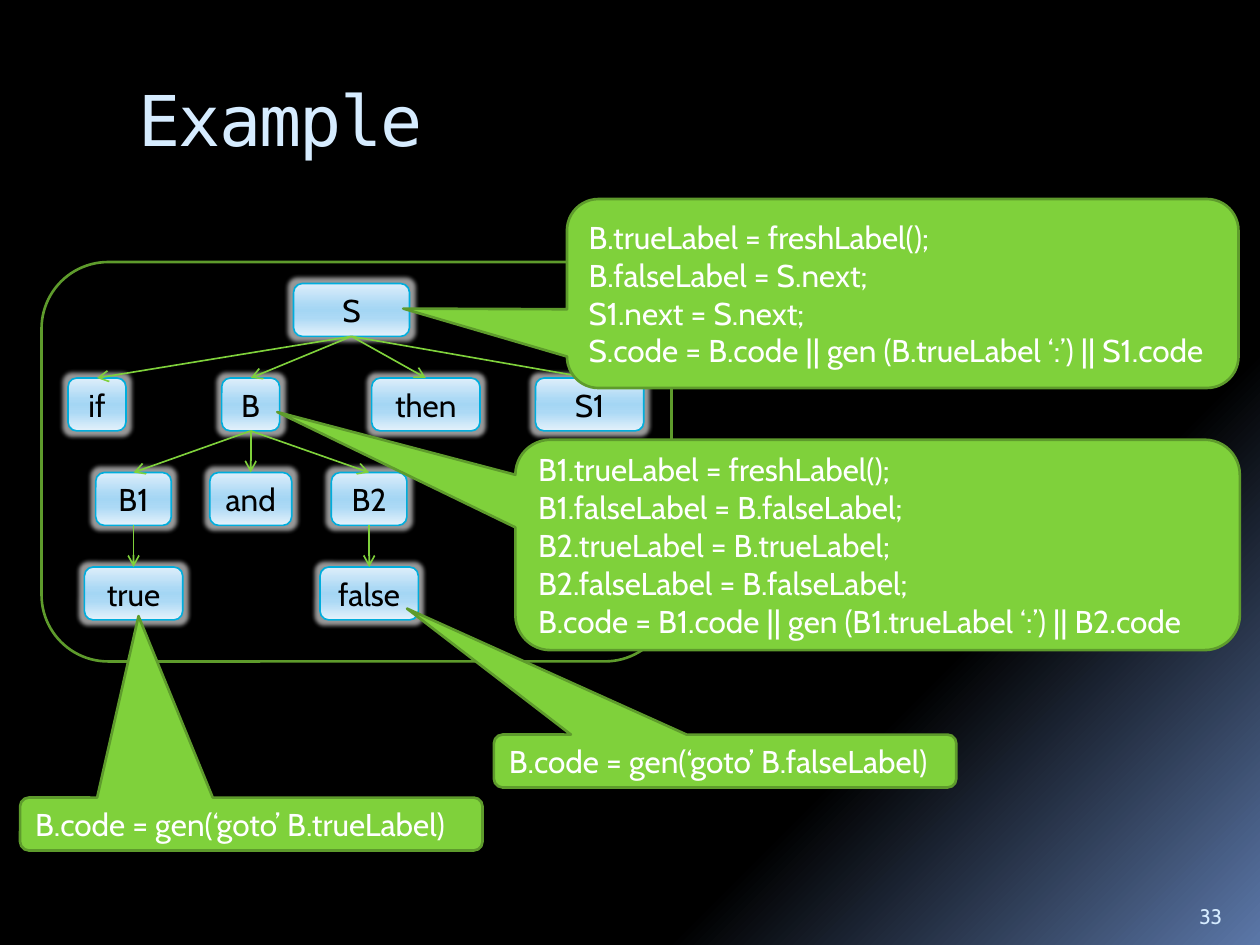
from lxml.etree import SubElement
from pptx import Presentation
from pptx.dml.color import RGBColor
from pptx.enum.shapes import MSO_CONNECTOR as Connector, MSO_SHAPE as Shape
from pptx.enum.text import MSO_ANCHOR as Anchor, PP_ALIGN as Align
from pptx.oxml.ns import qn
from pptx.util import Inches, Pt

THEME = {
    "body_font": "Cabin", "title_font": "DejaVu Sans Mono",
    "title_size": 40, "body_size": 18, "number_size": 12,
    "heading": "D6ECFF", "node_text": "000000", "callout_text": "FFFFFF",
    "green": "7FD13B", "dark_green": "5E9B2C", "node_line": "00ADDC", "glow": "FFFFFF",
    "node_fill": [(0, "DEEEFA"), (40, "ACD9F5"), (50, "A4D6F4"), (65, "ACD9F5"), (100, "E5F2FB")],
    "background": [(65, "000000"), (73, "000000"), (100, "5B77A8")],
    "thin": 0.94, "thick": 1.5,
}
TITLE = ("Example", (1, 0.56, 8.5, 1))
PAGE_NUMBER = ("33", (9.42, 7.02, 0.5, 0.4))
FRAME = (0.33, 2.08, 5, 3.17)
TREE_TOP, ROW_STEP, NODE_HEIGHT = 2.25, 0.75, 0.42
NODES = [
    ("S", None, 0, 2.79, 0.92),
    ("if", "S", 1, 0.77, 0.46),
    ("B", "S", 1, 1.99, 0.46),
    ("then", "S", 1, 3.38, 0.86),
    ("S1", "S", 1, 4.68, 0.86),
    ("B1", "B", 2, 1.06, 0.6),
    ("and", "B", 2, 1.99, 0.65),
    ("B2", "B", 2, 2.93, 0.6),
    ("true", "B1", 3, 1.06, 0.78),
    ("false", "B2", 3, 2.93, 0.78),
]
CALLOUTS = [
    (["B.trueLabel = freshLabel();", "B.falseLabel = S.next;", "S1.next = S.next;",
      "S.code = B.code || gen (B.trueLabel ‘:’) || S1.code"],
     (4.5, 1.58, 5.33, 1.5), (3.2, 2.45)),
    (["B1.trueLabel = freshLabel();", "B1.falseLabel = B.falseLabel;",
      "B2.trueLabel = B.trueLabel;", "B2.falseLabel = B.falseLabel;",
      "B.code = B1.code || gen (B1.trueLabel ‘:’) || B2.code"],
     (4.09, 3.49, 5.75, 1.67), (2.2, 3.27)),
    (["B.code = gen(‘goto’ B.trueLabel)"], (0.16, 6.33, 3.67, 0.42), (1.1, 4.89)),
    (["B.code = gen(‘goto’ B.falseLabel)"], (3.92, 5.83, 3.67, 0.42), (3.23, 4.83)),
]


def color(name):
    return RGBColor.from_string(THEME[name])


def write(shape, lines, *, ink, size="body_size", font="body_font",
          align=Align.LEFT, anchor=Anchor.MIDDLE, spacing=None):
    frame = shape.text_frame
    frame.word_wrap = True
    frame.vertical_anchor = anchor
    for index, line in enumerate(lines):
        paragraph = frame.add_paragraph() if index else frame.paragraphs[0]
        paragraph.alignment = align
        run = paragraph.add_run()
        run.text = line
        run.font.name = THEME[font]
        run.font.size = Pt(THEME[size])
        run.font.color.rgb = color(ink)
        if spacing is not None:
            run.font._element.set("spc", str(spacing * 100))


def paint_gradient(fill, element, stops, angle):
    fill.gradient()
    fill.gradient_angle = 360 - angle
    stop_list = next(element.iter(qn("a:gsLst")))
    for stop in list(stop_list):
        stop_list.remove(stop)
    for position, value in stops:
        stop = SubElement(stop_list, qn("a:gs"), pos=str(position * 1000))
        SubElement(stop, qn("a:srgbClr"), val=value)


def add_shape(slide, kind, box, line, width):
    shape = slide.shapes.add_shape(kind, *map(Inches, box))
    shape.shadow.inherit = False
    shape.line.color.rgb = color(line)
    shape.line.width = Pt(THEME[width])
    return shape


def add_glow(shape):
    effects = shape._element.spPr.find(qn("a:effectLst"))
    glow = SubElement(effects, qn("a:glow"), rad=str(Pt(5)))
    tint = SubElement(glow, qn("a:srgbClr"), val=THEME["glow"])
    SubElement(tint, qn("a:alpha"), val="60000")


def add_node(slide, label, row, center, width):
    box = (center - width / 2, TREE_TOP + row * ROW_STEP, width, NODE_HEIGHT)
    node = add_shape(slide, Shape.ROUNDED_RECTANGLE, box, "node_line", "thin")
    paint_gradient(node.fill, node._element, THEME["node_fill"], 90)
    add_glow(node)
    write(node, [label], ink="node_text", align=Align.CENTER)
    return node


def add_edge(slide, parent, child):
    edge = slide.shapes.add_connector(Connector.STRAIGHT, 0, 0, 0, 0)
    edge.begin_connect(parent, 2)
    edge.end_connect(child, 0)
    edge.line.color.rgb = color("green")
    edge.line.width = Pt(THEME["thin"])
    SubElement(edge.line._get_or_add_ln(), qn("a:tailEnd"), type="arrow")
    SubElement(edge._element.spPr, qn("a:effectLst"))


def add_callout(slide, lines, box, target):
    left, top, width, height = box
    callout = add_shape(slide, Shape.ROUNDED_RECTANGULAR_CALLOUT, box, "dark_green", "thick")
    callout.fill.solid()
    callout.fill.fore_color.rgb = color("green")
    callout.adjustments[0] = (target[0] - left) / width - 0.5
    callout.adjustments[1] = (target[1] - top) / height - 0.5
    write(callout, lines, ink="callout_text")


def add_label(slide, label, **style):
    text, box = label
    write(slide.shapes.add_textbox(*map(Inches, box)), [text], ink="heading", **style)


def main():
    presentation = Presentation()
    presentation.slide_width, presentation.slide_height = Inches(10), Inches(7.5)
    slide = presentation.slides.add_slide(presentation.slide_layouts[6])
    paint_gradient(slide.background.fill, slide._element, THEME["background"], 45)

    add_label(slide, TITLE, size="title_size", font="title_font", anchor=Anchor.TOP, spacing=-1)
    add_label(slide, PAGE_NUMBER, size="number_size", anchor=Anchor.BOTTOM)
    frame = add_shape(slide, Shape.ROUNDED_RECTANGLE, FRAME, "dark_green", "thick")
    frame.fill.background()

    nodes = {}
    for label, parent, row, center, width in NODES:
        nodes[label] = add_node(slide, label, row, center, width)
        if parent:
            add_edge(slide, nodes[parent], nodes[label])
    for lines, box, target in CALLOUTS:
        add_callout(slide, lines, box, target)
    presentation.save("out.pptx")


if __name__ == "__main__":
    main()
